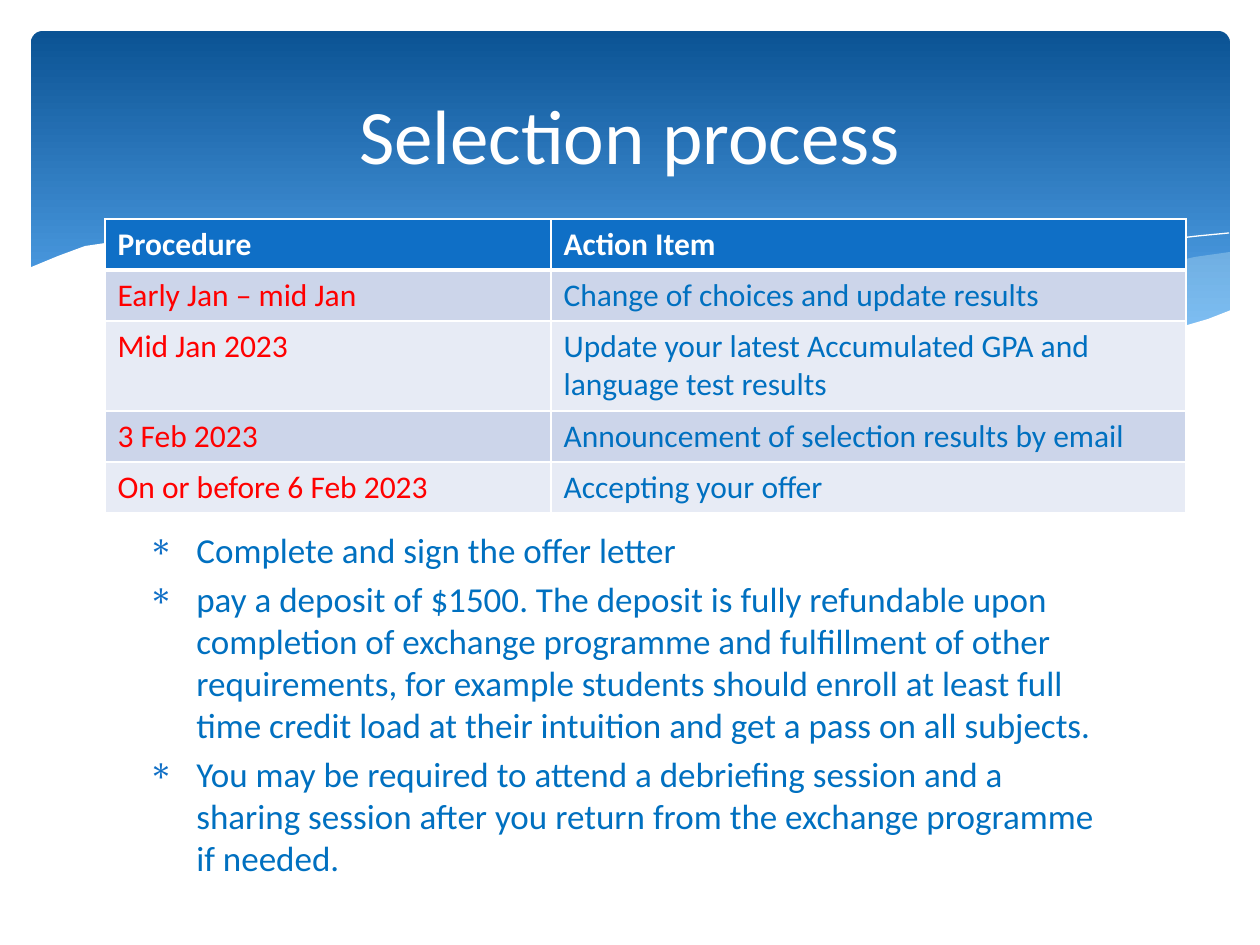
"""Build the selection process slide: wave banner, schedule table and notes."""
from lxml import etree
from pptx import Presentation
from pptx.dml.color import RGBColor
from pptx.enum.shapes import MSO_SHAPE
from pptx.enum.text import MSO_ANCHOR, PP_ALIGN
from pptx.oxml.ns import qn
from pptx.util import Emu, Pt

ROUNDED = MSO_SHAPE.ROUNDED_RECTANGLE
MIDDLE = MSO_ANCHOR.MIDDLE
LEFT, CENTER = PP_ALIGN.LEFT, PP_ALIGN.CENTER

FONT = "Calibri"
WHITE = RGBColor(0xFF, 0xFF, 0xFF)
NAVY = RGBColor(0x0B, 0x53, 0x94)
SKY = RGBColor(0x59, 0xAA, 0xF2)
ICE = RGBColor(0xDB, 0xF5, 0xF9)
ACCENT = RGBColor(0x0F, 0x6F, 0xC6)
BLUE = RGBColor(0x00, 0x70, 0xC0)
RED = RGBColor(0xFF, 0x00, 0x00)
BANDS = (RGBColor(0xCC, 0xD5, 0xEA), RGBColor(0xE7, 0xEB, 0xF5))

TITLE = "Selection process"
SCHEDULE = [
    ("Procedure", "Action Item"),
    ("Early Jan – mid Jan", "Change of choices and update results"),
    ("Mid Jan 2023", "Update your latest Accumulated GPA and language test results"),
    ("3 Feb 2023", "Announcement of selection results by email"),
    ("On or before 6 Feb 2023", "Accepting your offer"),
]
NOTES = [
    "Complete and sign the offer letter",
    "pay a deposit of $1500. The deposit is fully refundable upon completion of "
    "exchange programme and fulfillment of other requirements, for example students "
    "should enroll at least full time credit load at their intuition and get a pass "
    "on all subjects.",
    "You may be required to attend a debriefing session and a sharing session after "
    "you return from the exchange programme if needed.",
]
COLUMN_WIDTHS = (446, 635)
ROW_HEIGHTS = (51, 51, 90, 51, 51)

RIGHT_WAVE = [
    (1230, 252), (1195, 257), (1159, 265), (1123, 272), (1085, 281), (1048, 290),
    (982, 305), (919, 319), (861, 330), (833, 334), (870, 339), (906, 343),
    (939, 346), (969, 348), (1012, 350), (1052, 349), (1087, 347), (1121, 343),
    (1150, 339), (1178, 332), (1204, 324), (1230, 311),
]
MIDDLE_WAVE = [
    (1125, 344), (1091, 339), (1017, 328), (934, 311), (842, 291), (793, 280),
    (736, 266), (682, 255), (632, 247), (586, 241), (529, 235), (479, 233),
    (433, 234), (394, 237), (360, 241), (407, 247), (456, 256), (509, 266),
    (566, 280), (668, 302), (757, 321), (819, 333), (876, 341), (926, 346),
    (974, 349), (1030, 350), (1080, 349), (1114, 345),
]
LONG_CREST = [
    (389, 246), (413, 242), (445, 238), (488, 236), (524, 236), (567, 237),
    (616, 239), (672, 244), (733, 252), (801, 262), (876, 276), (958, 294),
    (1047, 316), (1143, 343),
]
SHORT_CREST = [
    (772, 324), (823, 310), (876, 296), (942, 281), (1016, 265), (1091, 251),
    (1146, 242), (1198, 236), (1229, 233),
]
FRONT_WAVE = [
    (29, 268), (58, 256), (85, 246), (119, 241), (150, 238), (184, 234),
    (223, 232), (266, 232), (315, 234), (368, 239), (428, 248), (493, 260),
    (563, 277), (634, 294), (699, 309), (760, 320), (816, 330), (867, 338),
    (915, 343), (959, 346), (999, 348), (1037, 349), (1071, 347), (1103, 344),
    (1133, 339), (1159, 334), (1184, 326), (1208, 319), (1231, 310),
    (1231, 415), (29, 415),
]
WAVES = [
    (RIGHT_WAVE, ICE, 29), (MIDDLE_WAVE, ICE, 40), (LONG_CREST, None, 0),
    (SHORT_CREST, None, 0), (FRONT_WAVE, WHITE, 100),
]


def px(*lengths):
    return [Emu(round(length * 914400 / 126)) for length in lengths]


def add_text(para, text, size, color, bold=False, align=LEFT):
    para.alignment = align
    span = para.add_run()
    span.text = text
    span.font.name, span.font.size = FONT, Pt(size)
    span.font.bold, span.font.color.rgb = bold, color


def add_bullet(para):
    props = para._p.get_or_add_pPr()
    margin, hang = px(89, -48)
    props.set("marL", str(margin))
    props.set("indent", str(hang))
    color = etree.SubElement(props, qn("a:buClr"))
    etree.SubElement(color, qn("a:srgbClr"), val=str(ACCENT))
    etree.SubElement(props, qn("a:buChar"), char="∗")


def add_borders(cell, bottom):
    props = cell._tc.get_or_add_tcPr()
    for side, width in (("L", 1), ("R", 1), ("T", 1), ("B", bottom)):
        line = etree.SubElement(props, qn(f"a:ln{side}"), w=str(Pt(width)))
        fill = etree.SubElement(line, qn("a:solidFill"))
        etree.SubElement(fill, qn("a:srgbClr"), val=str(WHITE))


def add_banner(page):
    banner = page.shapes.add_shape(ROUNDED, *px(31, 31, 1199, 340))
    banner.shadow.inherit = False
    banner.adjustments[0] = 0.034
    banner.line.fill.background()
    banner.fill.gradient()
    banner.fill.gradient_angle = 270
    for stop, color, position in zip(banner.fill.gradient_stops, (NAVY, SKY), (0, 0.9)):
        stop.color.rgb, stop.position = color, position


def add_wave(page, points, color, opacity):
    builder = page.shapes.build_freeform(*points[0], scale=914400 / 126)
    builder.add_line_segments(points[1:], close=color is not None)
    wave = builder.convert_to_shape()
    wave.shadow.inherit = False
    if color is None:
        wave.fill.background()
        wave.line.color.rgb, wave.line.width = WHITE, Pt(0)
        return
    wave.line.fill.background()
    wave.fill.solid()
    wave.fill.fore_color.rgb = color
    if opacity < 100:
        tint = wave._element.spPr.find(qn("a:solidFill"))[0]
        etree.SubElement(tint, qn("a:alpha"), val=str(opacity * 1000))


def add_title(page):
    title = page.shapes.title
    title.left, title.top, title.width, title.height = px(63, 47, 1134, 173)
    title.text_frame.vertical_anchor = MIDDLE
    add_text(title.text_frame.paragraphs[0], TITLE, 44, WHITE, align=CENTER)
    page.shapes._spTree.append(title._element)


def add_notes(page):
    frame = page.shapes.add_textbox(*px(95, 522, 1020, 277)).text_frame
    frame.word_wrap = True
    for index, note in enumerate(NOTES):
        para = frame.add_paragraph() if index else frame.paragraphs[0]
        para.space_before = Pt(4)
        add_bullet(para)
        add_text(para, note, 20, BLUE)


def add_schedule(page):
    size = len(SCHEDULE), len(COLUMN_WIDTHS)
    place = px(105, 219, sum(COLUMN_WIDTHS), sum(ROW_HEIGHTS))
    table = page.shapes.add_table(*size, *place).table
    for column, width in zip(table.columns, px(*COLUMN_WIDTHS)):
        column.width = width
    for row, height in zip(table.rows, px(*ROW_HEIGHTS)):
        row.height = height
    for r, texts in enumerate(SCHEDULE):
        for c, text in enumerate(texts):
            cell = table.cell(r, c)
            header = r == 0
            add_borders(cell, 3 if header else 1)
            cell.fill.solid()
            cell.fill.fore_color.rgb = ACCENT if header else BANDS[(r - 1) % 2]
            color = WHITE if header else (RED, BLUE)[c]
            add_text(cell.text_frame.paragraphs[0], text, 18, color, bold=header)


def main():
    deck = Presentation()
    deck.slide_width, deck.slide_height = px(1260, 945)
    page = deck.slides.add_slide(deck.slide_layouts[5])
    add_banner(page)
    for wave in WAVES:
        add_wave(page, *wave)
    add_title(page)
    add_notes(page)
    add_schedule(page)
    deck.save("out.pptx")


if __name__ == "__main__":
    main()
